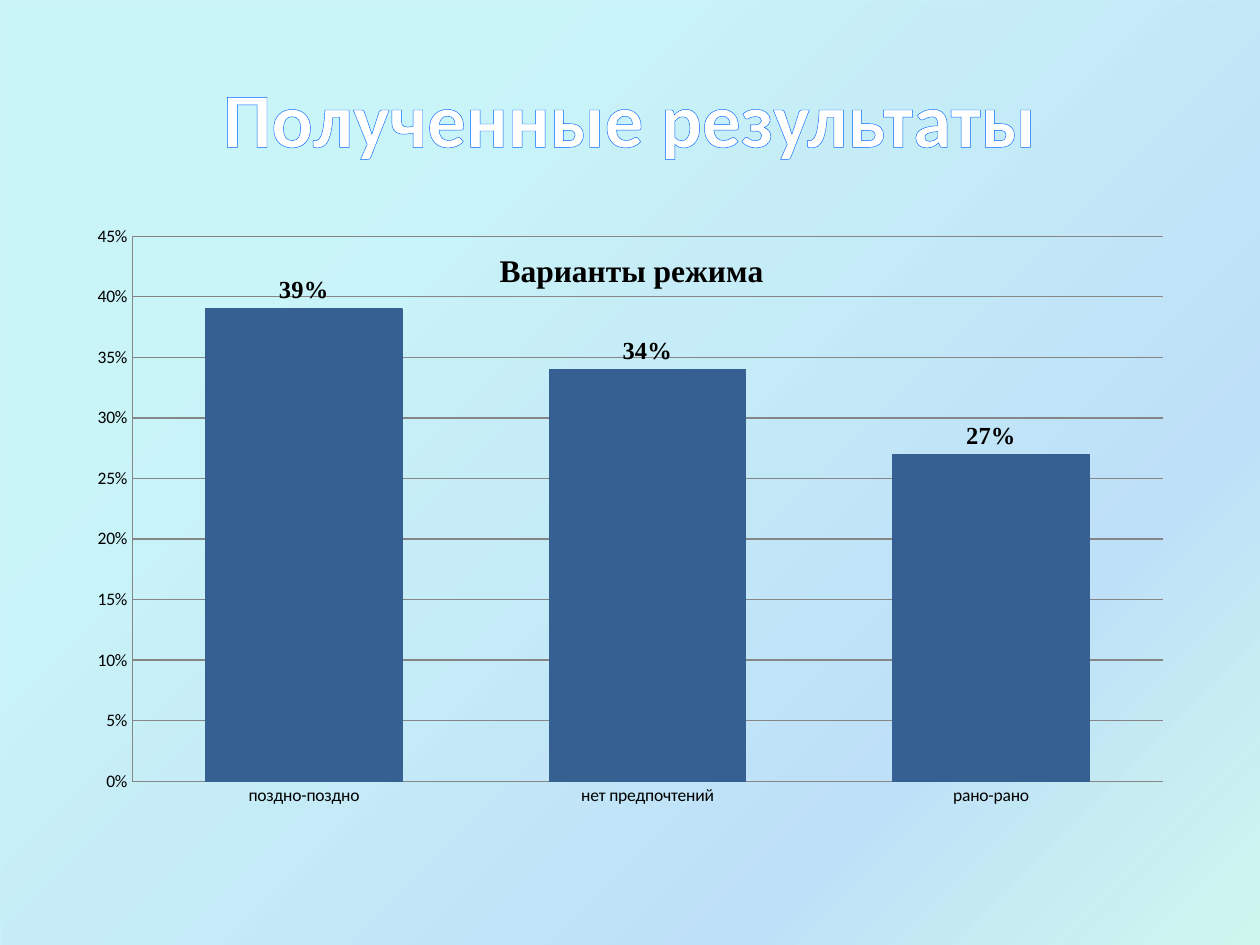
from dataclasses import dataclass

from lxml.etree import SubElement
from pptx import Presentation
from pptx.chart.data import CategoryChartData
from pptx.dml.color import RGBColor as Rgb
from pptx.enum.chart import XL_CHART_TYPE as ChartType
from pptx.enum.chart import XL_LABEL_POSITION as LabelPosition
from pptx.enum.chart import XL_TICK_MARK as TickMark
from pptx.enum.shapes import MSO_SHAPE as Shape
from pptx.enum.text import MSO_ANCHOR as Anchor
from pptx.enum.text import PP_ALIGN as Align
from pptx.oxml import parse_xml
from pptx.oxml.ns import nsdecls, qn
from pptx.util import Cm, Pt


@dataclass(frozen=True)
class Theme:
    """Colours, fonts and type sizes of the slide."""
    body_font: str = "Calibri"
    accent_font: str = "Times New Roman"
    heading: str = "FFFFFF"
    heading_outline: str = "0066FF"
    ink: str = "000000"
    bar: str = "376092"
    grid: str = "868686"
    heading_size: float = 44
    chart_title_size: float = 18
    label_size: float = 14
    axis_size: float = 10
    backdrop: tuple = (
        (25, "21D6E0", 23), (75, "0087E6", 25),
        (100, "03D4A8", 18), (100, "005CBF", 26),
    )


THEME = Theme()
REGIMES = {"поздно-поздно": 0.39, "нет предпочтений": 0.34, "рано-рано": 0.27}


def style_font(font, size, face, color, bold=False):
    """Set the look of a font."""
    font.size, font.name, font.bold = Pt(size), face, bold
    font.color.rgb = Rgb.from_string(color)


def write_text(frame, text, *, size, face, color, bold=True, outline=None):
    """Write one centred, formatted line, with outlined letters if asked."""
    paragraph = frame.paragraphs[0]
    paragraph.alignment = Align.CENTER
    run = paragraph.add_run()
    run.text = text
    style_font(run.font, size, face, color, bold)
    if outline:
        run.font._element.insert(0, parse_xml(
            f'<a:ln {nsdecls("a")} w="{Pt(1.45)}"><a:solidFill>'
            f'<a:srgbClr val="{outline}"/></a:solidFill></a:ln>'))


def add_backdrop(slide):
    """Cover the slide with a translucent diagonal gradient."""
    backdrop = slide.shapes.add_shape(Shape.RECTANGLE, 0, 0, Cm(25.4), Cm(19.48))
    backdrop.shadow.inherit = False
    backdrop.line.fill.background()
    stops = "".join(
        f'<a:gs pos="{position * 1000}"><a:srgbClr val="{color}">'
        f'<a:alpha val="{opacity * 1000}"/></a:srgbClr></a:gs>'
        for position, color, opacity in THEME.backdrop)
    gradient = parse_xml(
        f'<a:gradFill {nsdecls("a")} rotWithShape="1"><a:gsLst>{stops}</a:gsLst>'
        '<a:lin ang="2700000" scaled="0"/></a:gradFill>')
    backdrop._element.spPr.find(qn("a:prstGeom")).addnext(gradient)


def add_heading(slide, text):
    """Add the slide heading."""
    heading = slide.shapes.add_textbox(Cm(1.27), Cm(0.76), Cm(22.86), Cm(3.18))
    frame = heading.text_frame
    frame.word_wrap = True
    frame.vertical_anchor = Anchor.MIDDLE
    write_text(frame, text, size=THEME.heading_size, face=THEME.body_font,
               color=THEME.heading, outline=THEME.heading_outline)


def place(part, index, **fractions):
    """Give a chart part a manual layout in fractions of the chart."""
    for automatic in part.findall(qn("c:layout")):
        part.remove(automatic)
    layout = parse_xml(f'<c:layout {nsdecls("c")}><c:manualLayout/></c:layout>')
    for tag, value in fractions.items():
        SubElement(layout[0], qn(f"c:{tag}")).set("val", str(value))
    part.insert(index, layout)


def style_axis(axis):
    """Give an axis thin grey lines and no ticks."""
    axis.major_tick_mark = axis.minor_tick_mark = TickMark.NONE
    axis.format.line.color.rgb = Rgb.from_string(THEME.grid)
    axis.format.line.width = Pt(0.75)


def style_bars(plot):
    """Colour the bars and label them with their shares."""
    plot.gap_width = 75
    plot.vary_by_categories = False
    bars = plot.series[0]
    bars.format.fill.solid()
    bars.format.fill.fore_color.rgb = Rgb.from_string(THEME.bar)
    bars.format.line.color.rgb = Rgb.from_string(THEME.bar)
    bars.format.line.width = Pt(0.75)
    labels = bars.data_labels
    labels.show_value = True
    labels.number_format, labels.number_format_is_linked = "0%", False
    labels.position = LabelPosition.OUTSIDE_END
    style_font(labels.font, THEME.label_size, THEME.accent_font, THEME.ink, True)


def add_regime_chart(slide, title):
    """Add the column chart of daily regimes."""
    shares = CategoryChartData(number_format="0%")
    shares.categories = list(REGIMES)
    shares.add_series("Series 1", list(REGIMES.values()))
    chart = slide.shapes.add_chart(
        ChartType.COLUMN_CLUSTERED, Cm(1.27), Cm(4.45), Cm(22.86), Cm(12.57),
        shares).chart
    chart.has_legend = False
    style_font(chart.font, THEME.axis_size, THEME.body_font, THEME.ink)

    chart.has_title = True
    write_text(chart.chart_title.text_frame, title, size=THEME.chart_title_size,
               face=THEME.accent_font, color=THEME.ink)
    title_part = chart.chart_title._element
    title_part.find(qn("c:overlay")).set("val", "1")
    place(title_part, 1, xMode="edge", yMode="edge", x=0.38, y=0.04)
    place(chart._chartSpace.chart.plotArea, 0, layoutTarget="inner",
          xMode="edge", yMode="edge", x=0.061, y=0.025, w=0.909, h=0.874)

    style_axis(chart.category_axis)
    share_axis = chart.value_axis
    style_axis(share_axis)
    share_axis.minimum_scale, share_axis.maximum_scale = 0, 0.45
    share_axis.major_unit = 0.05
    share_axis.tick_labels.number_format = "0%"
    share_axis.tick_labels.number_format_is_linked = False
    gridline = share_axis.major_gridlines.format.line
    gridline.color.rgb = Rgb.from_string(THEME.grid)
    gridline.width = Pt(0.75)
    style_bars(chart.plots[0])


def main():
    """Build and save the slide."""
    deck = Presentation()
    deck.slide_width, deck.slide_height = Cm(25.4), Cm(19.05)
    slide = deck.slides.add_slide(deck.slide_layouts[6])
    add_backdrop(slide)
    add_heading(slide, "Полученные результаты")
    add_regime_chart(slide, "Варианты режима")
    deck.save("out.pptx")


if __name__ == "__main__":
    main()
